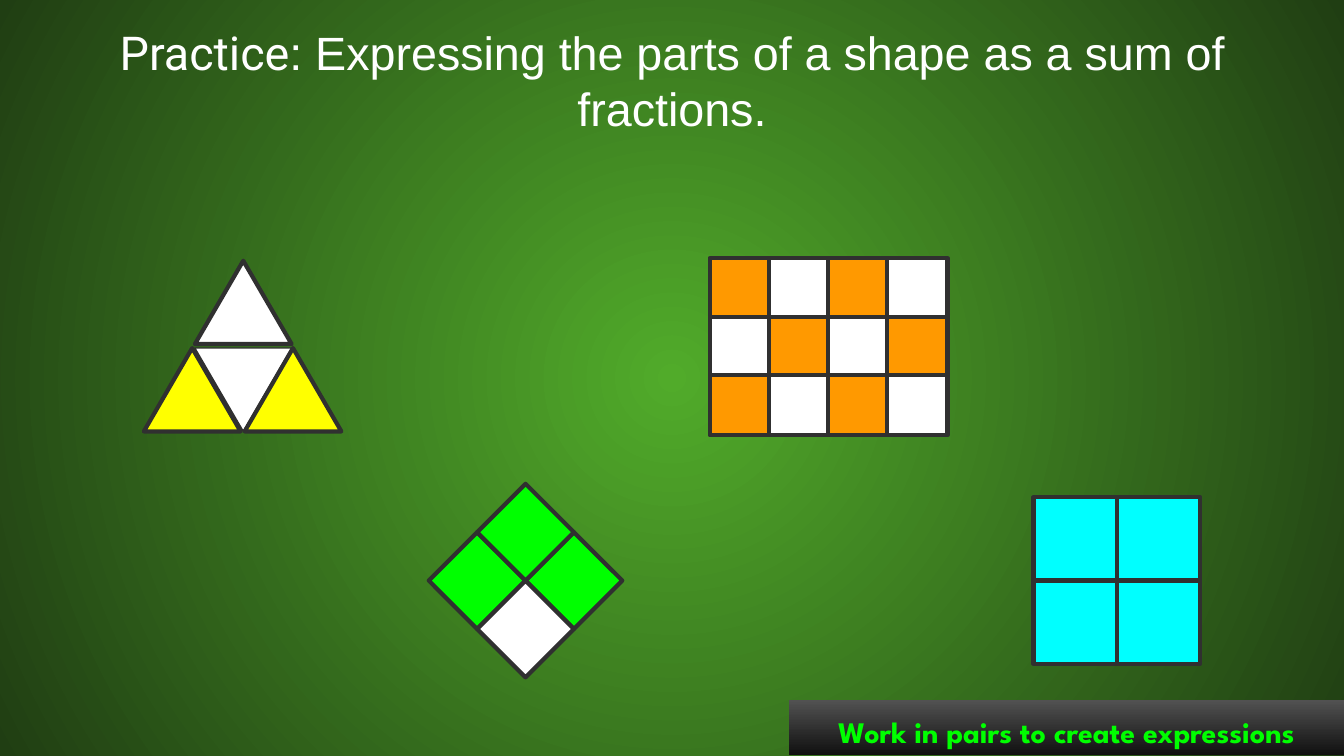
from dataclasses import dataclass

from lxml.etree import SubElement
from pptx import Presentation
from pptx.dml.color import RGBColor
from pptx.enum.shapes import MSO_SHAPE
from pptx.enum.text import MSO_ANCHOR, MSO_AUTO_SIZE, PP_ALIGN
from pptx.oxml.ns import qn
from pptx.util import Inches, Pt

WHITE, YELLOW, GREEN = "FFFFFF", "FFFF00", "00FF00"
CYAN, ORANGE, OUTLINE = "00FFFF", "FF9900", "303030"


@dataclass
class Part:
    """One piece of a divided shape."""
    left: float
    top: float
    color: str
    rotation: float = 0
    line_width: float = 2.25


def rgb(value: str) -> RGBColor:
    return RGBColor.from_string(value)


def set_gradient(fill, start: str, end: str) -> None:
    fill.gradient()
    for stop, color, position in zip(fill.gradient_stops, (start, end), (0, 1)):
        stop.color.rgb = rgb(color)
        stop.position = position


def add_run(p, text: str, color: str, **formats) -> None:
    r = p.add_run()
    r.text = text
    r.font.color.rgb = rgb(color)
    for name, value in formats.items():
        setattr(r.font, name, value)


def format_frame(tf) -> None:
    formats = {"word_wrap": True, "auto_size": MSO_AUTO_SIZE.NONE,
               "vertical_anchor": MSO_ANCHOR.TOP}
    formats |= {f"margin_{side}": Inches(0.1) for side in ("left", "top", "right", "bottom")}
    for name, value in formats.items():
        setattr(tf, name, value)
    tf.paragraphs[0].alignment = PP_ALIGN.CENTER


def add_divided_shape(s, kind, width: float, height: float, parts: list[Part]) -> None:
    group = s.shapes.add_group_shape()
    for part in parts:
        sp = group.shapes.add_shape(kind, Inches(part.left), Inches(part.top),
                                    Inches(width), Inches(height))
        sp.shadow.inherit = False
        sp.rotation = part.rotation
        sp.fill.solid()
        sp.fill.fore_color.rgb = rgb(part.color)
        sp.line.color.rgb = rgb(OUTLINE)
        sp.line.width = Pt(part.line_width)


# Widescreen slide, 16:9
prs = Presentation()
prs.slide_width, prs.slide_height = Inches(10), Inches(10 * 9 / 16)
s = prs.slides.add_slide(prs.slide_layouts[5])

# Background: radial gradient from the centre
set_gradient(s.background.fill, "51AB2A", "203E13")
grad = s.background._cSld.find(".//" + qn("a:gradFill"))
grad.remove(grad.find(qn("a:lin")))
circle = SubElement(grad, qn("a:path"), {"path": "circle"})
SubElement(circle, qn("a:fillToRect"), {side: "50000" for side in "ltrb"})

# Title
title = s.shapes.title
title.left, title.top = Inches(0.08), Inches(0.08)
title.width, title.height = Inches(9.84), Inches(0.69)
format_frame(title.text_frame)
p = title.text_frame.paragraphs[0]
add_run(p, "Practice", WHITE, size=Pt(25), name="Roboto")
add_run(p, ": Expressing the parts of a shape as a sum of fractions.", WHITE,
        size=Pt(25), name="Arial")

# Triangle in four parts
add_divided_shape(s, MSO_SHAPE.ISOSCELES_TRIANGLE, 0.72, 0.62, [
    Part(1.45, 2.59, WHITE, rotation=180, line_width=0.75),
    Part(1.45, 1.94, WHITE),
    Part(1.07, 2.59, YELLOW),
    Part(1.82, 2.59, YELLOW),
])

# Diamond in four parts: left, right, top, bottom
half = 0.36
add_divided_shape(s, MSO_SHAPE.DIAMOND, 2 * half, 2 * half, [
    Part(3.55 + dx * half, 3.96 + dy * half, color, rotation)
    for dx, dy, color, rotation in ((-1, 0, GREEN, 0), (1, 0, GREEN, 0),
                                    (0, -1, GREEN, 90), (0, 1, WHITE, 90))
])

# Square in four parts
side = 0.62
add_divided_shape(s, MSO_SHAPE.RECTANGLE, side, side, [
    Part(7.69 + col * side, 3.7 + row * side, CYAN)
    for row in range(2) for col in range(2)
])

# Checkered rectangle, three rows of four
add_divided_shape(s, MSO_SHAPE.RECTANGLE, 0.45, 0.45, [
    Part(5.28 + col * 0.44, top, WHITE if (row + col) % 2 else ORANGE)
    for row, top in enumerate((1.92, 2.36, 2.79)) for col in range(4)
])

# Instruction banner
banner = s.shapes.add_shape(MSO_SHAPE.RECTANGLE, Inches(5.87), Inches(5.21),
                            Inches(4.13), Inches(0.41))
banner.shadow.inherit = False
banner.line.fill.background()
set_gradient(banner.fill, "515151", "101010")
banner.fill.gradient_angle = 270  # counter-clockwise, so top to bottom
format_frame(banner.text_frame)
add_run(banner.text_frame.paragraphs[0], "Work in pairs to create expressions", GREEN,
        size=Pt(16), name="League Spartan", bold=True)

prs.save("out.pptx")
